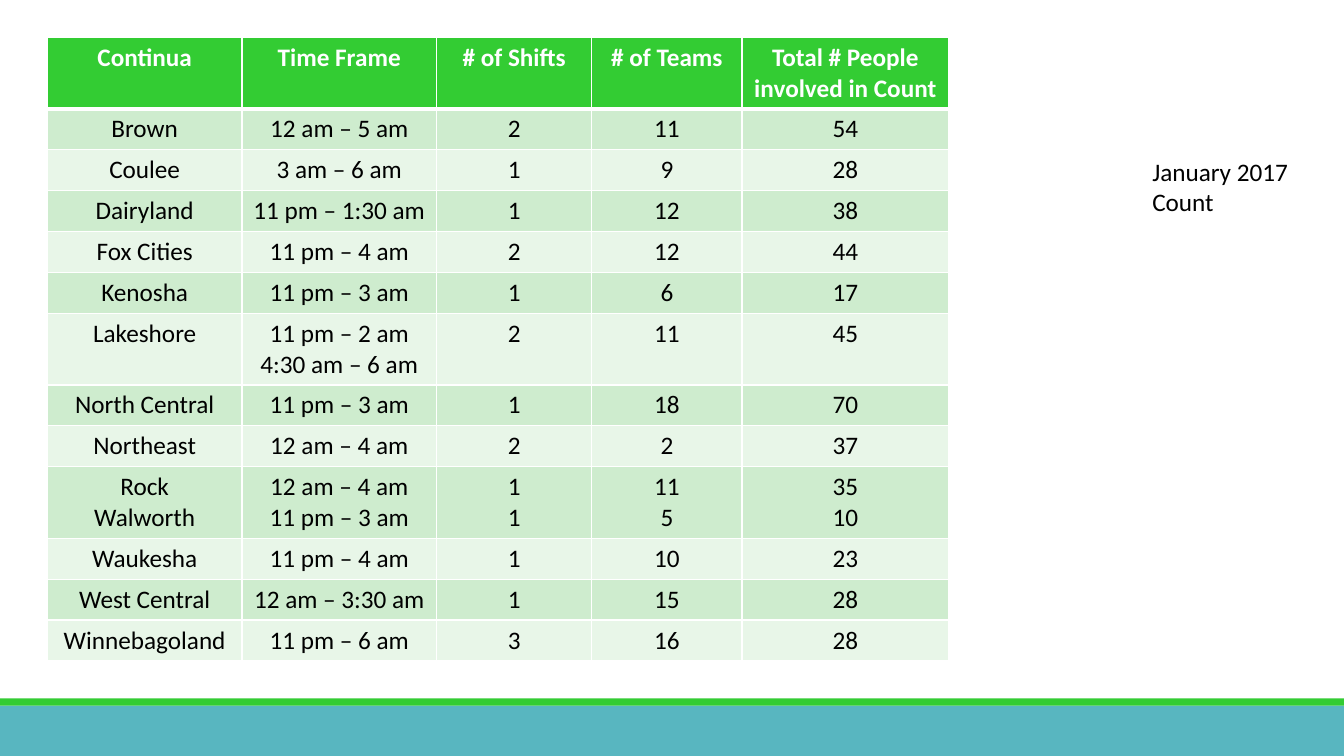
from lxml import etree
from pptx import Presentation
from pptx.dml.color import RGBColor
from pptx.enum import shapes, text
from pptx.oxml import ns
from pptx.util import Inches, Pt

# Content: a tuple in a cell holds one paragraph per item
HEADER = ("Continua", "Time Frame", "# of Shifts", "# of Teams",
          "Total # People involved in Count")
COUNTS = [
    ("Brown", "12 am – 5 am", "2", "11", "54"),
    ("Coulee", "3 am – 6 am", "1", "9", "28"),
    ("Dairyland", "11 pm – 1:30 am", "1", "12", "38"),
    ("Fox Cities", "11 pm – 4 am", "2", "12", "44"),
    ("Kenosha", "11 pm – 3 am", "1", "6", "17"),
    ("Lakeshore", ("11 pm – 2 am", "4:30 am – 6 am"), "2", "11", "45"),
    ("North Central", "11 pm – 3 am", "1", "18", "70"),
    ("Northeast", "12 am – 4 am", "2", "2", "37"),
    (("Rock", "Walworth"), ("12 am – 4 am", "11 pm – 3 am"),
     ("1", "1"), ("11", "5"), ("35", "10")),
    ("Waukesha", "11 pm – 4 am", "1", "10", "23"),
    ("West Central", "12 am – 3:30 am", "1", "15", "28"),
    ("Winnebagoland", "11 pm – 6 am", "3", "16", "28"),
]
CAPTION = "January 2017 Count"

COLUMN_WIDTHS = (1.93, 1.93, 1.54, 1.49, 2.05)
SINGLE_ROW, DOUBLE_ROW = 0.4, 0.7
GREEN, TEAL, WHITE, BLACK = "33CC33", "58B6C0", "FFFFFF", "000000"
BANDS = ("CEECCE", "E8F6E8")
FOOTER_BANDS = [(7, 0.5, TEAL), (6.93, 0.07, GREEN)]  # top, height, fill


def color(value):
    return RGBColor.from_string(value)


def style_font(paragraph, value, bold=False):
    for run in paragraph.runs:
        run.font.name = "Calibri"
        run.font.size = Pt(18)
        run.font.bold = bold
        run.font.color.rgb = color(value)


def add_borders(cell, bottom_width, top_width):
    properties = cell._tc.get_or_add_tcPr()
    widths = {"a:lnL": 1, "a:lnR": 1, "a:lnT": top_width, "a:lnB": bottom_width}
    for side, width in widths.items():
        line = etree.SubElement(properties, ns.qn(side), w=str(Pt(width)))
        fill = etree.SubElement(line, ns.qn("a:solidFill"))
        etree.SubElement(fill, ns.qn("a:srgbClr"), val=WHITE)


prs = Presentation()
prs.slide_width, prs.slide_height = Inches(13.33), Inches(7.5)
slide = prs.slides.add_slide(prs.slide_layouts[6])

# Footer bands
for top, height, fill in FOOTER_BANDS:
    band = slide.shapes.add_shape(shapes.MSO_SHAPE.RECTANGLE, 0, Inches(top),
                                  prs.slide_width, Inches(height))
    band.shadow.inherit = False
    band.fill.solid()
    band.fill.fore_color.rgb = color(fill)
    band.line.fill.background()

# Count table: the header and rows with two-line cells are taller
rows = [HEADER] + COUNTS
heights = [DOUBLE_ROW if row is HEADER or any(isinstance(entry, tuple) for entry in row)
           else SINGLE_ROW for row in rows]
table = slide.shapes.add_table(len(rows), len(HEADER), Inches(0.47), Inches(0.37),
                               Inches(sum(COLUMN_WIDTHS)), Inches(sum(heights))).table
for column, width in zip(table.columns, COLUMN_WIDTHS):
    column.width = Inches(width)
for r, (row, height) in enumerate(zip(rows, heights)):
    table.rows[r].height = Inches(height)
    is_header = r == 0
    for c, entry in enumerate(row):
        cell = table.cell(r, c)
        add_borders(cell, 3 if is_header else 1, 3 if r == 1 else 1)
        cell.fill.solid()
        cell.fill.fore_color.rgb = color(GREEN if is_header else BANDS[(r - 1) % 2])
        cell.text_frame.text = "\n".join(entry) if isinstance(entry, tuple) else entry
        for paragraph in cell.text_frame.paragraphs:
            paragraph.alignment = text.PP_ALIGN.CENTER
            style_font(paragraph, WHITE if is_header else BLACK, is_header)

# Caption beside the table
caption = slide.shapes.add_textbox(Inches(11.33), Inches(1.5), Inches(1.62), Inches(0.71))
caption.text_frame.word_wrap = True
caption.text_frame.auto_size = text.MSO_AUTO_SIZE.SHAPE_TO_FIT_TEXT
caption.text_frame.text = CAPTION
style_font(caption.text_frame.paragraphs[0], BLACK)

prs.save("out.pptx")
